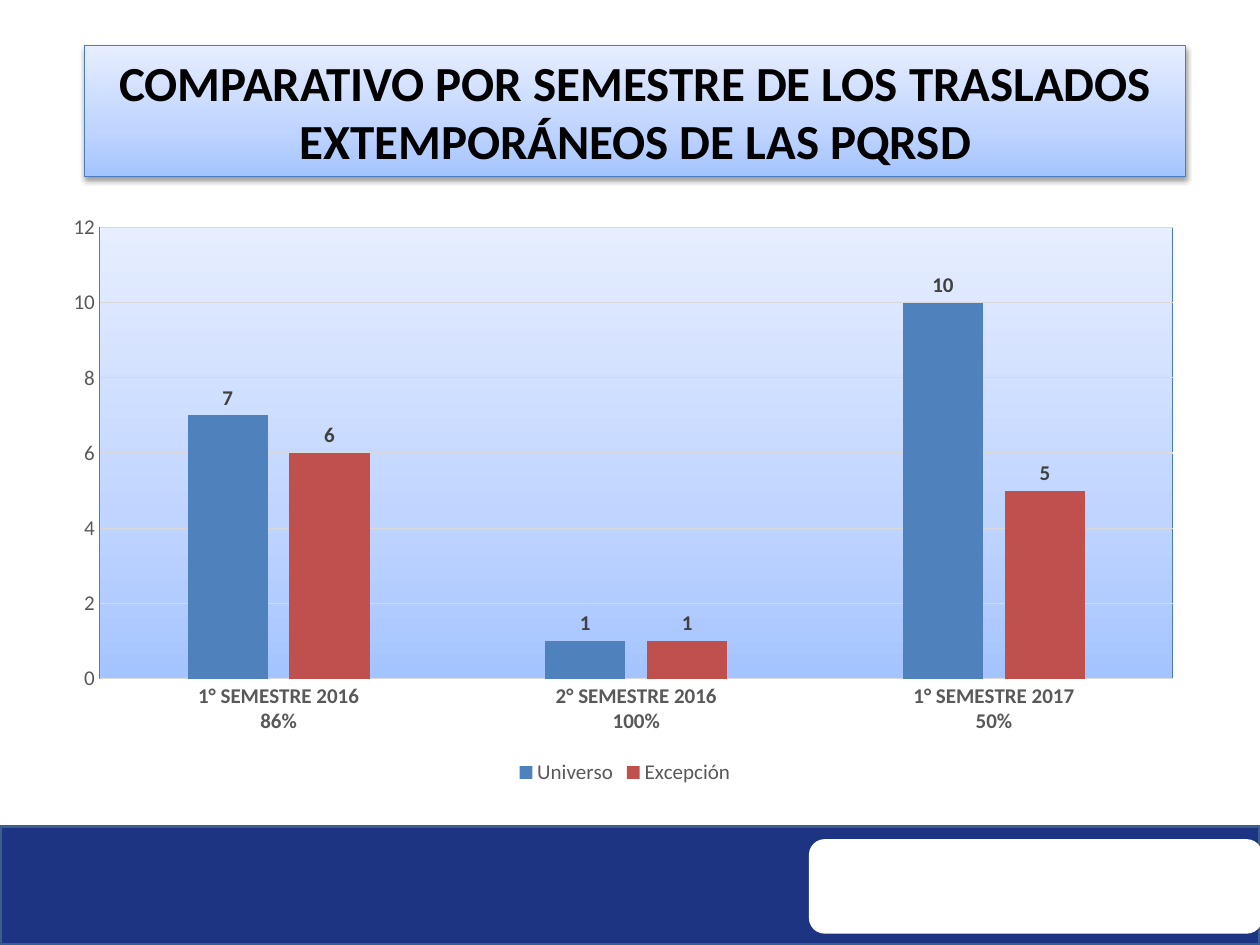
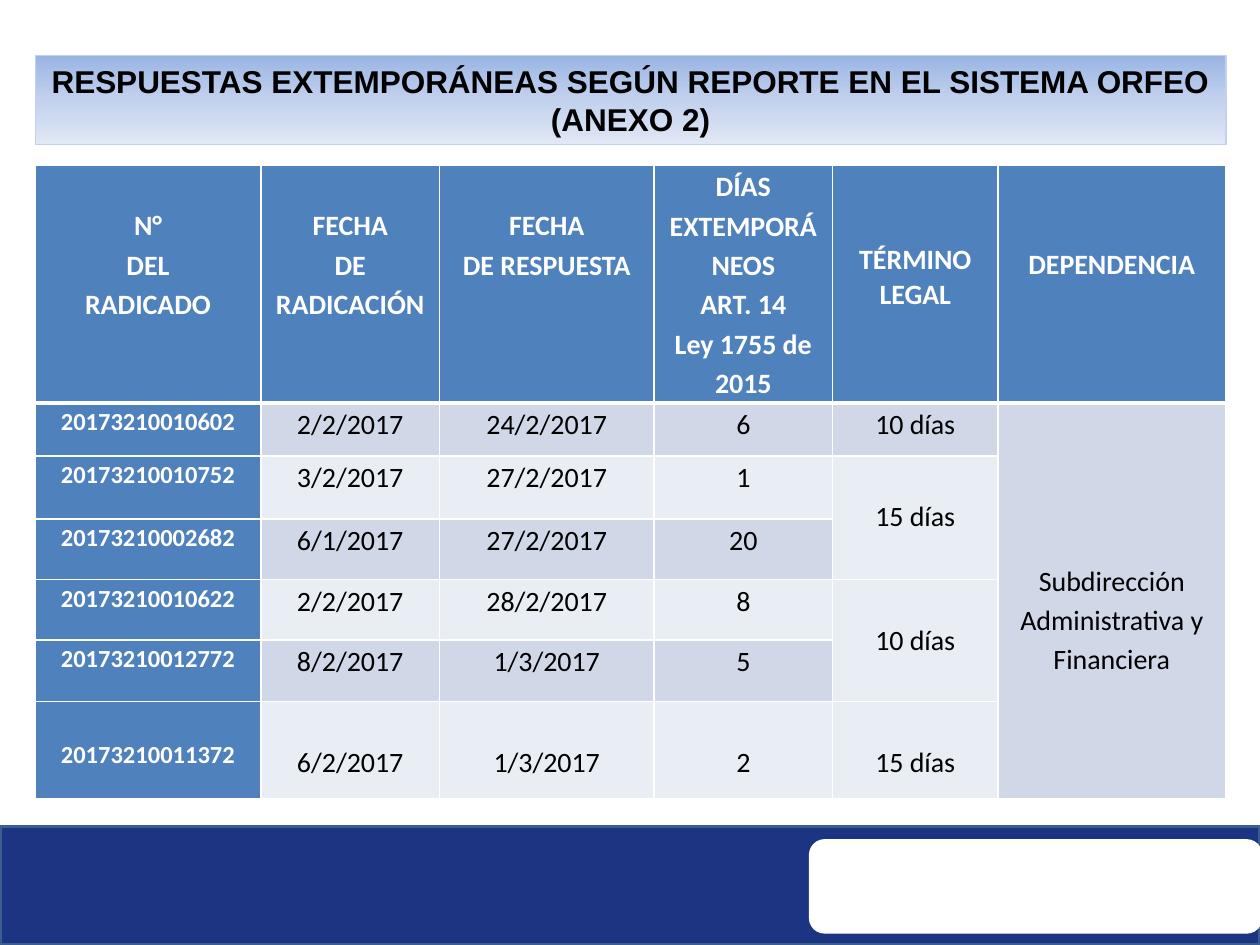
from lxml import etree
from pptx import Presentation
from pptx.chart.data import CategoryChartData
from pptx.dml.color import RGBColor
from pptx.enum.chart import XL_CHART_TYPE, XL_LABEL_POSITION, XL_LEGEND_POSITION, XL_TICK_MARK
from pptx.enum.shapes import MSO_SHAPE
from pptx.enum.text import MSO_ANCHOR, MSO_AUTO_SIZE, PP_ALIGN
from pptx.oxml import parse_xml
from pptx.oxml.ns import nsdecls, qn
from pptx.util import Inches, Pt

COLORS = {
    "white": "FFFFFF", "black": "000000", "band": "1C3481", "band_line": "3A5F8C",
    "blue": "4F81BD", "red": "C0504D", "panel_line": "4B7EBC", "title_line": "C2D1ED",
    "axis_text": "595959", "label_text": "404040", "grid": "D9D9D9",
    "row_dark": "D0D8E8", "row_light": "E9EDF4",
}
PANEL_STOPS = [(0, "A4C4FF"), (35, "BFD4FF"), (100, "E6EEFF")]
TITLE_STOPS = [(0, "9AB5E4"), (50, "C2D1ED"), (100, "E1E8F5")]

CATEGORIES = ["1° SEMESTRE 2016\n86%", "2° SEMESTRE 2016\n100%", "1° SEMESTRE 2017\n50%"]
SERIES = [("Universo", (7, 1, 10), "blue"), ("Excepción", (6, 1, 5), "red")]

COLUMN_WIDTHS = [1.79, 1.42, 1.7, 1.42, 1.31, 1.81]
ROW_HEIGHTS = [1.89, 0.42, 0.5, 0.48, 0.48, 0.49, 0.77]
LINE = 0.31  # height of one 16 pt table line
HEADERS = [
    (["N°", "DEL", "RADICADO"], LINE),
    (["FECHA", "DE RADICACIÓN"], LINE),
    (["FECHA", "DE RESPUESTA"], LINE),
    (["DÍAS", "EXTEMPORÁNEOS", "ART. 14", "Ley 1755 de 2015"], 0),
    (["TÉRMINO LEGAL"], 2 * LINE),
    (["DEPENDENCIA"], 2 * LINE),
]
REPLIES = [
    ("20173210010602", "2/2/2017", "24/2/2017", "6"),
    ("20173210010752", "3/2/2017", "27/2/2017", "1"),
    ("20173210002682", "6/1/2017", "27/2/2017", "20"),
    ("20173210010622", "2/2/2017", "28/2/2017", "8"),
    ("20173210012772", "8/2/2017", "1/3/2017", "5"),
    ("20173210011372", "6/2/2017", "1/3/2017", "2"),
]
# (first row, last row, column, text, top margin)
GROUPS = [
    (1, 1, 4, "10 días", 0),
    (2, 3, 4, "15 días", LINE),
    (4, 5, 4, "10 días", LINE),
    (6, 6, 4, "15 días", LINE),
    (1, 6, 5, "Subdirección Administrativa y Financiera", 4 * LINE),
]


def rgb(name):
    return RGBColor.from_string(COLORS[name])


def gradient(stops, angle):
    """Return a linear a:gradFill; the angle is clockwise in degrees."""
    marks = "".join(f'<a:gs pos="{place * 1000}"><a:srgbClr val="{color}"/></a:gs>'
                    for place, color in stops)
    return parse_xml(f'<a:gradFill {nsdecls("a")} rotWithShape="1"><a:gsLst>{marks}</a:gsLst>'
                     f'<a:lin ang="{angle * 60000}" scaled="0"/></a:gradFill>')


def style_font(font, size, color, bold=False, name="Calibri"):
    font.size, font.bold, font.name = Pt(size), bold, name
    font.color.rgb = rgb(color)


def write_text(frame, lines, size, color="black", bold=False, name="Calibri", spacing=None):
    for index, line in enumerate(lines):
        para = frame.paragraphs[0] if index == 0 else frame.add_paragraph()
        para.alignment = PP_ALIGN.CENTER
        para.line_spacing = spacing
        span = para.add_run()
        span.text = line
        style_font(span.font, size, color, bold, name)


def add_title(page, lines, box, stops, angle, line, size, name, shadow=False):
    title = page.shapes.title
    title.left, title.top, title.width, title.height = map(Inches, box)
    properties = title.element.spPr
    properties.append(parse_xml(f'<a:prstGeom {nsdecls("a")} prst="rect"><a:avLst/></a:prstGeom>'))
    properties.append(gradient(stops, angle))
    title.line.color.rgb = rgb(line)
    title.line.width = Pt(0.75)
    if shadow:
        properties.append(parse_xml(
            f'<a:effectLst {nsdecls("a")}><a:outerShdw blurRad="{Pt(3.1)}" dist="{Pt(1.6)}" '
            f'dir="5400000" rotWithShape="0"><a:srgbClr val="{COLORS["black"]}">'
            '<a:alpha val="38000"/></a:srgbClr></a:outerShdw></a:effectLst>'))
    frame = title.text_frame
    frame.word_wrap = True
    frame.auto_size = MSO_AUTO_SIZE.NONE
    frame.vertical_anchor = MSO_ANCHOR.MIDDLE
    write_text(frame, lines, size, bold=True, name=name)


def add_footer(page, layout):
    """Draw the footer band and move it to the layout, so that every page shows it."""
    parts = [
        (MSO_SHAPE.RECTANGLE, (0, 6.56, 10, 0.94), "band", "band_line"),
        (MSO_SHAPE.ROUNDED_RECTANGLE, (6.42, 6.66, 3.6, 0.75), "white", None),
    ]
    for kind, box, fill, line in parts:
        shape = page.shapes.add_shape(kind, *map(Inches, box))
        shape.shadow.inherit = False
        shape.fill.solid()
        shape.fill.fore_color.rgb = rgb(fill)
        if line:
            shape.line.color.rgb = rgb(line)
            shape.line.width = Pt(2)
        else:
            shape.line.fill.background()
        layout.shapes.element.append(shape.element)


def format_plot_area(chart):
    area = chart.element.find(f'.//{qn("c:plotArea")}')
    for old in area.findall(qn("c:layout")):
        area.remove(old)
    places = {"x": 0.04, "y": 0.04, "w": 0.94, "h": 0.77}
    layout = parse_xml(f'<c:layout {nsdecls("c")}><c:manualLayout><c:layoutTarget val="inner"/>'
                       '<c:xMode val="edge"/><c:yMode val="edge"/></c:manualLayout></c:layout>')
    for key, value in places.items():
        etree.SubElement(layout[0], qn(f"c:{key}"), val=str(value))
    area.insert(0, layout)
    properties = parse_xml(
        f'<c:spPr {nsdecls("c", "a")}><a:ln w="{Pt(0.75)}"><a:solidFill>'
        f'<a:srgbClr val="{COLORS["panel_line"]}"/></a:solidFill></a:ln></c:spPr>')
    properties.insert(0, gradient(PANEL_STOPS, 270))
    area.append(properties)


def format_axes(chart):
    for axis, bold in ((chart.category_axis, True), (chart.value_axis, False)):
        axis.major_tick_mark = axis.minor_tick_mark = XL_TICK_MARK.NONE
        style_font(axis.tick_labels.font, 12, "axis_text", bold)
    chart.category_axis.format.line.color.rgb = rgb("grid")
    chart.category_axis.format.line.width = Pt(0.75)
    values = chart.value_axis
    values.minimum_scale, values.maximum_scale, values.major_unit = 0, 12, 2
    values.format.line.fill.background()
    values.major_gridlines.format.line.color.rgb = rgb("grid")
    values.major_gridlines.format.line.width = Pt(0.75)


def add_semester_chart(page, box):
    data = CategoryChartData()
    data.categories = CATEGORIES
    for name, values, _ in SERIES:
        data.add_series(name, values)
    chart = page.shapes.add_chart(XL_CHART_TYPE.COLUMN_CLUSTERED, *map(Inches, box), data).chart
    style_font(chart.font, 10, "black")
    chart.has_title = False
    chart.has_legend = True
    chart.legend.position = XL_LEGEND_POSITION.BOTTOM
    chart.legend.include_in_layout = False
    style_font(chart.legend.font, 12, "axis_text")
    format_axes(chart)
    plot = chart.plots[0]
    plot.gap_width, plot.overlap, plot.vary_by_categories = 219, -27, False
    for series, (_, _, color) in zip(plot.series, SERIES):
        series.format.fill.solid()
        series.format.fill.fore_color.rgb = rgb(color)
        labels = series.data_labels
        labels.show_value = True
        labels.position = XL_LABEL_POSITION.OUTSIDE_END
        style_font(labels.font, 12, "label_text", True)
    format_plot_area(chart)


def format_cell(cell, row, fill):
    """Set the insets, white borders and fill; the header has a thick lower border."""
    cell.margin_left = cell.margin_right = Inches(0.07)
    cell.margin_top = cell.margin_bottom = 0
    properties = cell._tc.get_or_add_tcPr()
    for side in "LRTB":
        thick = (row, side) in ((0, "B"), (1, "T"))
        properties.append(parse_xml(
            f'<a:ln{side} {nsdecls("a")} w="{Pt(3 if thick else 1)}"><a:solidFill>'
            f'<a:srgbClr val="{COLORS["white"]}"/></a:solidFill></a:ln{side}>'))
    cell.fill.solid()
    cell.fill.fore_color.rgb = rgb(fill)


def fill_cell(cell, lines, top=0, **style):
    cell.margin_top = Inches(top)
    write_text(cell.text_frame, lines, **{"size": 16, "spacing": 1.15, **style})


def add_reply_table(page, box):
    table = page.shapes.add_table(len(ROW_HEIGHTS), len(COLUMN_WIDTHS), *map(Inches, box)).table
    for column, width in zip(table.columns, COLUMN_WIDTHS):
        column.width = Inches(width)
    for row, height in enumerate(ROW_HEIGHTS):
        table.rows[row].height = Inches(height)
        for column in range(len(COLUMN_WIDTHS)):
            stripe = "row_dark" if row % 2 or column == 5 else "row_light"
            format_cell(table.cell(row, column), row,
                        "blue" if row == 0 or column == 0 else stripe)
    for column, (lines, top) in enumerate(HEADERS):
        spacing = 1 if column == 4 else 1.15
        fill_cell(table.cell(0, column), lines, top, color="white", bold=True, spacing=spacing)
    for row, values in enumerate(REPLIES, 1):
        top = LINE if row == len(REPLIES) else 0
        number, *details = values
        fill_cell(table.cell(row, 0), [number], top and 0.27, size=14, color="white", bold=True)
        for column, value in enumerate(details, 1):
            fill_cell(table.cell(row, column), [value], top)
    for first, last, column, text, top in GROUPS:
        cell = table.cell(first, column)
        if last > first:
            cell.merge(table.cell(last, column))
        fill_cell(cell, [text], top)


def build_chart_page(page):
    add_semester_chart(page, (0.43, 1.62, 9.06, 4.65))
    add_title(page, ["COMPARATIVO POR SEMESTRE DE LOS TRASLADOS EXTEMPORÁNEOS DE LAS PQRSD"],
              (0.67, 0.36, 8.74, 1.04), PANEL_STOPS, 270, "panel_line", 28, "Calibri", shadow=True)


def build_table_page(page):
    add_reply_table(page, (0.28, 1.31, 9.45, 5.04))
    add_title(page, ["RESPUESTAS EXTEMPORÁNEAS SEGÚN REPORTE EN EL SISTEMA ORFEO", "(ANEXO 2)"],
              (0.28, 0.44, 9.45, 0.71), TITLE_STOPS, 90, "title_line", 18, "Arial")


def main():
    deck = Presentation()
    deck.slide_width, deck.slide_height = Inches(10), Inches(7.5)
    layout = deck.slide_layouts[5]
    pages = [deck.slides.add_slide(layout) for _ in range(2)]
    add_footer(pages[0], layout)
    build_chart_page(pages[0])
    build_table_page(pages[1])
    deck.save("out.pptx")


if __name__ == "__main__":
    main()
